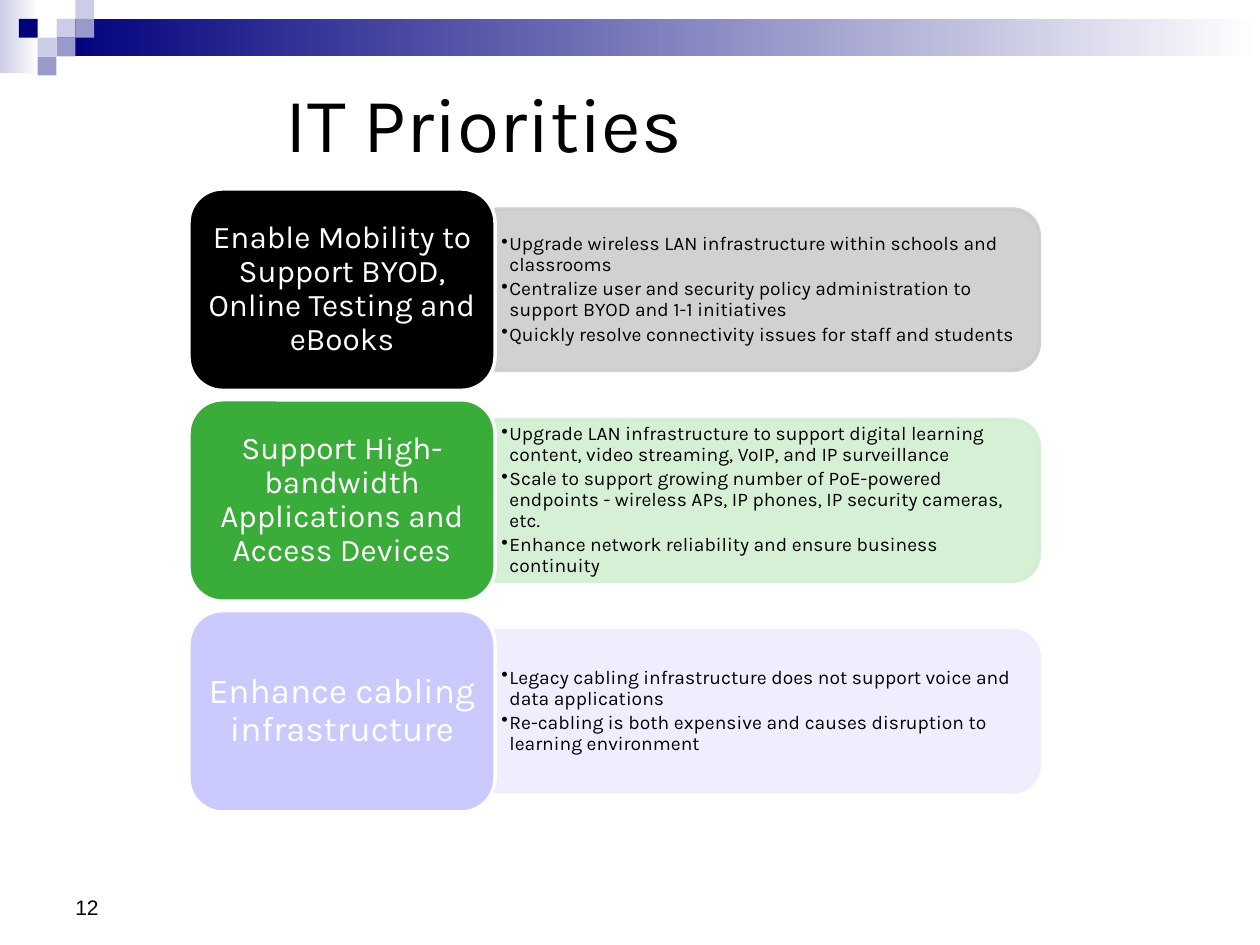
"""Build the IT Priorities slide: a stepped banner and three priority rows."""
from lxml import etree
from pptx import Presentation, util as u
from pptx.dml import color
from pptx.enum import shapes, text
from pptx.oxml import ns

TITLE = "IT Priorities"
PAGE = "12"
PRIORITIES = [
    ("Enable Mobility to Support BYOD, Online Testing and eBooks", 18, "000000", "CCCCCC", [
        "Upgrade wireless LAN infrastructure within schools and classrooms",
        "Centralize user and security policy administration to support BYOD and 1-1 initiatives",
        "Quickly resolve connectivity issues for staff and students",
    ]),
    ("Support High-bandwidth Applications and Access Devices", 18, "39AC39", "D2EFD2", [
        "Upgrade LAN infrastructure to support digital learning content, video streaming, "
        "VoIP, and IP surveillance",
        "Scale to support growing number of PoE-powered endpoints - wireless APs, IP phones, "
        "IP security cameras, etc.",
        "Enhance network reliability and ensure business continuity",
    ]),
    ("Enhance cabling infrastructure", 20, "CACAFF", "EDEDFF", [
        "Legacy cabling infrastructure does not support voice and data applications",
        "Re-cabling is both expensive and causes disruption to learning environment",
    ]),
]
FADES = [(0, 0, 0.79, 1.47, "CCCCE6"), (1.14, 0.38, 24.26, 0.76, "00007D")]
CELL = 0.38
SQUARES = [(3, 1, "CCCCE6"), (4, 0, "CCCCE6"), (4, 1, "9999CC"), (2, 2, "CCCCE6"),
           (1, 1, "00007D"), (3, 2, "9999CC"), (2, 3, "9999CC")]
LEFT, TOP, PITCH = 3.81, 3.81, 4.25
CARD_W, CARD_H = 6.17, 4.06
PANEL_W, PANEL_H = 10.97, 3.25
BODY_W, BODY_H = 10.82, 2.93


def rgb(value):
    return color.RGBColor.from_string(value)


def add_block(slide, kind, left, top, width, height, fill=None, line=None):
    block = slide.shapes.add_shape(kind, u.Cm(left), u.Cm(top), u.Cm(width), u.Cm(height))
    block.shadow.inherit = False
    if fill:
        block.fill.solid()
        block.fill.fore_color.rgb = rgb(fill)
    if line:
        block.line.color.rgb = rgb(line)
        block.line.width = u.Pt(2)
    else:
        block.line.fill.background()
    return block


def add_fade(slide, left, top, width, height, start):
    fade = add_block(slide, shapes.MSO_SHAPE.RECTANGLE, left, top, width, height)
    fade.fill.gradient()
    fade.fill.gradient_angle = 0
    for stop, value in zip(fade.fill.gradient_stops, (start, "FFFFFF")):
        stop.color.rgb = rgb(value)


def make_translucent(block, percent):
    for tone in block.element.spPr.iter(ns.qn("a:srgbClr")):
        etree.SubElement(tone, ns.qn("a:alpha"), val=str(percent * 1000))


def set_frame(frame, anchor, inset_x=0.25, inset_y=0.13):
    frame.word_wrap = True
    frame.vertical_anchor = anchor
    frame.margin_left = frame.margin_right = u.Cm(inset_x)
    frame.margin_top = frame.margin_bottom = u.Cm(inset_y)
    return frame


def add_frame(slide, left, top, width, height, anchor, *insets):
    box = slide.shapes.add_textbox(u.Cm(left), u.Cm(top), u.Cm(width), u.Cm(height))
    return set_frame(box.text_frame, anchor, *insets)


def write(paragraph, words, size, tone="000000", font="Karla"):
    run = paragraph.add_run()
    run.text = words
    run.font.size = u.Pt(size)
    run.font.name = font
    run.font.color.rgb = rgb(tone)


def add_bullet(paragraph, words):
    paragraph.line_spacing = 0.9
    paragraph.space_after = u.Pt(2)
    write(paragraph, words, 11)
    properties = paragraph._p.get_or_add_pPr()
    properties.set("marL", str(u.Cm(0.16)))
    properties.set("indent", str(-u.Cm(0.16)))
    etree.SubElement(properties, ns.qn("a:buChar"), char="•")


def add_priority(slide, row, heading, size, card_fill, panel_fill, points):
    top = TOP + row * PITCH
    middle = top + CARD_H / 2
    split = LEFT + CARD_W
    panel = add_block(slide, shapes.MSO_SHAPE.ROUND_2_SAME_RECTANGLE,
                      split + (PANEL_W - PANEL_H) / 2, middle - PANEL_W / 2,
                      PANEL_H, PANEL_W, panel_fill, panel_fill)
    panel.rotation = 90
    make_translucent(panel, 90)

    body = add_frame(slide, split, middle - BODY_H / 2, BODY_W, BODY_H,
                     text.MSO_ANCHOR.MIDDLE, 0.13, 0.05)
    for index, point in enumerate(points):
        add_bullet(body.add_paragraph() if index else body.paragraphs[0], point)

    card = add_block(slide, shapes.MSO_SHAPE.ROUNDED_RECTANGLE,
                     LEFT, top, CARD_W, CARD_H, card_fill, "FFFFFF")
    label = set_frame(card.text_frame, text.MSO_ANCHOR.MIDDLE, size / 100, 0.1).paragraphs[0]
    label.alignment = text.PP_ALIGN.CENTER
    label.line_spacing = 0.9
    write(label, heading, size, "FFFFFF")


def main():
    deck = Presentation()
    deck.slide_width, deck.slide_height = u.Cm(25.4), u.Cm(19.05)
    slide = deck.slides.add_slide(deck.slide_layouts[6])

    for fade in FADES:
        add_fade(slide, *fade)
    for column, row, fill in SQUARES:
        add_block(slide, shapes.MSO_SHAPE.RECTANGLE, column * CELL, row * CELL, CELL, CELL, fill)

    title = add_frame(slide, 5.51, 1.47, 12.47, 1.96, text.MSO_ANCHOR.MIDDLE)
    write(title.paragraphs[0], TITLE, 44)
    for row, priority in enumerate(PRIORITIES):
        add_priority(slide, row, *priority)
    number = add_frame(slide, 1.27, 17.35, 5.92, 1.32, text.MSO_ANCHOR.BOTTOM)
    write(number.paragraphs[0], PAGE, 12, font="Arial")

    deck.save("out.pptx")


if __name__ == "__main__":
    main()
